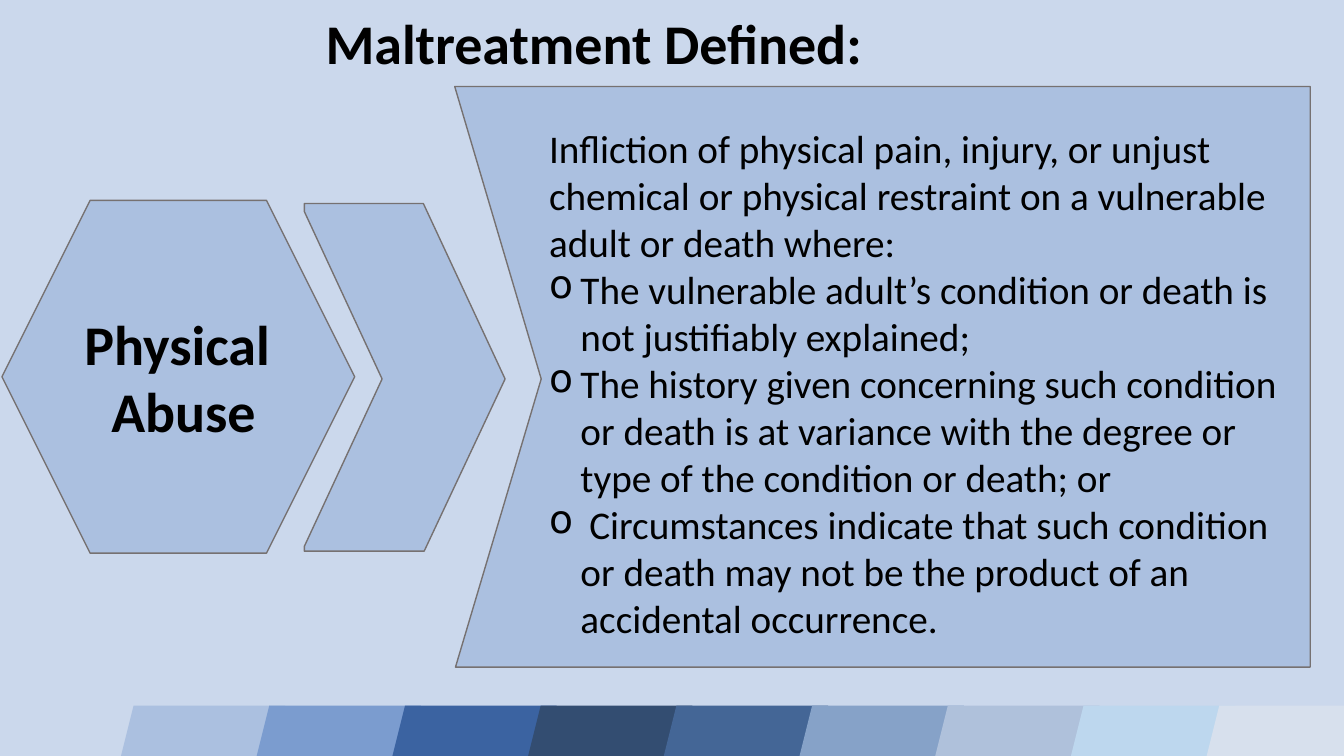
from lxml import etree
from pptx import Presentation
from pptx import util as u
from pptx.dml.color import RGBColor
from pptx.enum import shapes, text
from pptx.oxml import ns

BACKGROUND = RGBColor(0xCB, 0xD8, 0xEC)
PANEL = RGBColor(0xAB, 0xC0, 0xE0)
OUTLINE = RGBColor(0x76, 0x71, 0x71)
BLACK = RGBColor(0x00, 0x00, 0x00)
BAND = [
    PANEL,
    RGBColor(0x7B, 0x9C, 0xCF),
    RGBColor(0x3B, 0x63, 0xA1),
    RGBColor(0x33, 0x4D, 0x71),
    RGBColor(0x44, 0x66, 0x96),
    RGBColor(0x86, 0xA2, 0xC8),
    RGBColor(0xAF, 0xC1, 0xDB),
    RGBColor(0xBD, 0xD7, 0xEE),
    RGBColor(0xD7, 0xE0, 0xED),
]
FONT = "Calibri"

PANEL_POINTS = [(11.46, 2.18), (33.02, 2.18), (33.02, 16.81), (11.48, 16.81), (13.64, 9.55)]
CHEVRON_POINTS = [
    (7.67, 5.13), (10.67, 5.13), (12.73, 9.55), (10.69, 13.89),
    (7.67, 13.89), (7.67, 13.77), (9.63, 9.55), (7.67, 5.33),
]
INTRODUCTION = (
    "Infliction of physical pain, injury, or unjust chemical or physical "
    "restraint on a vulnerable adult or death where:"
)
CONDITIONS = [
    "The vulnerable adult’s condition or death is not justifiably explained;",
    "The history given concerning such condition or death is at variance with "
    "the degree or type of the condition or death; or",
    " Circumstances indicate that such condition or death may not be the "
    "product of an accidental occurrence.",
]


def paint(shape, fill, line=None):
    shape.shadow.inherit = False
    shape.fill.solid()
    shape.fill.fore_color.rgb = fill
    if line is None:
        shape.line.fill.background()
    else:
        shape.line.color.rgb = line
        shape.line.width = u.Pt(1)


def add_preset(slide, kind, box, fill, line=None):
    shape = slide.shapes.add_shape(kind, *map(u.Cm, box))
    paint(shape, fill, line)


def add_outline(slide, points):
    start, *others = [(u.Cm(x), u.Cm(y)) for x, y in points]
    builder = slide.shapes.build_freeform(*start)
    builder.add_line_segments(others, close=True)
    paint(builder.convert_to_shape(), PANEL, OUTLINE)


def add_run(paragraph, words, size, bold=False):
    run = paragraph.add_run()
    run.text = words
    run.font.name = FONT
    run.font.size = u.Pt(size)
    run.font.bold = bold
    run.font.color.rgb = BLACK


def add_bullet(paragraph):
    properties = paragraph._p.get_or_add_pPr()
    indent = u.Cm(0.79)
    properties.set("marL", str(indent))
    properties.set("indent", str(-indent))
    bullet = etree.SubElement(properties, ns.qn("a:buChar"))
    bullet.set("char", "o")


def add_text(slide, box, lines, size, bold=False, alignment=None, bulleted_from=None):
    frame = slide.shapes.add_textbox(*map(u.Cm, box)).text_frame
    frame.word_wrap = True
    for index, words in enumerate(lines):
        paragraph = frame.add_paragraph() if index else frame.paragraphs[0]
        paragraph.alignment = alignment
        if bulleted_from is not None and index >= bulleted_from:
            add_bullet(paragraph)
        add_run(paragraph, words, size, bold)


def set_title(slide, words):
    title = slide.shapes.title
    title.left, title.top, title.width, title.height = map(u.Cm, (7.95, 0.28, 17.96, 1.78))
    title.fill.solid()
    title.fill.fore_color.rgb = BACKGROUND
    frame = title.text_frame
    frame.auto_size = text.MSO_AUTO_SIZE.NONE
    frame.vertical_anchor = text.MSO_ANCHOR.BOTTOM
    paragraph = frame.paragraphs[0]
    paragraph.alignment = text.PP_ALIGN.LEFT
    paragraph.line_spacing = 0.9
    add_run(paragraph, words, 40, bold=True)


def add_band(slide):
    for index, color in enumerate(BAND):
        box = (2.77 + 3.42 * index, 17.78, 4.42, 2.39)
        add_preset(slide, shapes.MSO_SHAPE.PARALLELOGRAM, box, color)


def main():
    presentation = Presentation()
    presentation.slide_width = u.Cm(33.87)
    presentation.slide_height = u.Cm(19.05)
    slide = presentation.slides.add_slide(presentation.slide_layouts.get_by_name("Title Only"))
    slide.background.fill.solid()
    slide.background.fill.fore_color.rgb = BACKGROUND

    set_title(slide, "Maltreatment Defined:")
    add_band(slide)
    add_outline(slide, PANEL_POINTS)
    add_text(slide, (13.59, 3, 19.43, 14.63), [INTRODUCTION, *CONDITIONS], 28, bulleted_from=1)
    add_preset(slide, shapes.MSO_SHAPE.HEXAGON, (0.05, 5.05, 8.89, 8.89), PANEL, OUTLINE)
    add_text(slide, (0.84, 7.67, 7.57, 3.68), ["Physical ", "Abuse"], 40,
             bold=True, alignment=text.PP_ALIGN.CENTER)
    add_outline(slide, CHEVRON_POINTS)
    presentation.save("out.pptx")


if __name__ == "__main__":
    main()
